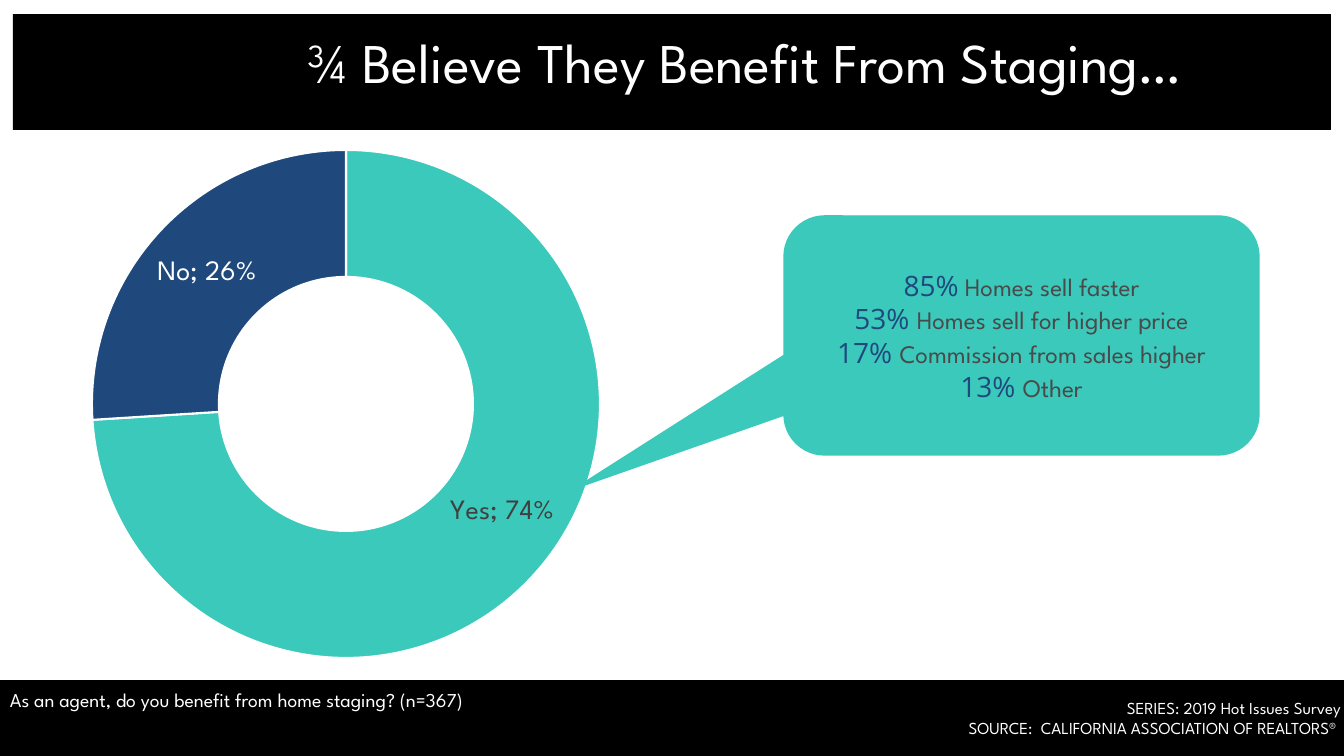
from lxml import etree
from pptx import Presentation
from pptx.chart.data import CategoryChartData
from pptx.dml.color import RGBColor
from pptx.enum.chart import XL_CHART_TYPE
from pptx.enum.shapes import MSO_SHAPE
from pptx.enum.text import MSO_ANCHOR, PP_ALIGN
from pptx.oxml import parse_xml
from pptx.oxml.ns import nsdecls, qn
from pptx.util import Emu, Pt

EMU_PER_PX = 914400 / 100.8
SPARTAN, OPEN_SANS = "League Spartan", "Open Sans"
BLACK, WHITE, TEAL, NAVY = "000000", "FFFFFF", "3AC9BB", "1F497D"
DARK_GREY, GREY = "404040", "4A4A4A"
RECTANGLE = MSO_SHAPE.RECTANGLE
CALLOUT = MSO_SHAPE.ROUNDED_RECTANGULAR_CALLOUT
DOUGHNUT = XL_CHART_TYPE.DOUGHNUT
LEFT, CENTER, RIGHT = PP_ALIGN.LEFT, PP_ALIGN.CENTER, PP_ALIGN.RIGHT
TOP, MIDDLE = MSO_ANCHOR.TOP, MSO_ANCHOR.MIDDLE

ANSWERS = [("Yes", 0.74, TEAL, DARK_GREY), ("No", 0.26, NAVY, WHITE)]
BENEFITS = [
    ("85%", " Homes sell faster"),
    ("53% ", "Homes sell for higher price"),
    ("17% ", "Commission from sales higher"),
    ("13% ", "Other"),
]


def px(*lengths):
    return [Emu(round(length * EMU_PER_PX)) for length in lengths]


def color(hex_string):
    return RGBColor.from_string(hex_string)


def style_font(font, name, size, fill):
    font.name = name
    font.size = Pt(size)
    font.color.rgb = color(fill)


def write(frame, paragraphs, align, anchor=TOP, wrap=True, line_spacing=None):
    """Fill a text frame; each paragraph is a list of (text, font, size, colour)."""
    frame.word_wrap = wrap
    frame.vertical_anchor = anchor
    for index, spans in enumerate(paragraphs):
        para = frame.add_paragraph() if index else frame.paragraphs[0]
        para.alignment = align
        if line_spacing:
            para.line_spacing = line_spacing
        for text, name, size, fill in spans:
            span = para.add_run()
            span.text = text
            style_font(span.font, name, size, fill)


def add_text(page, bounds, lines, size, align, **options):
    box = page.shapes.add_textbox(*px(*bounds))
    paragraphs = [[(line, SPARTAN, size, WHITE)] for line in lines]
    write(box.text_frame, paragraphs, align, **options)


def add_block(page, preset, bounds, fill):
    block = page.shapes.add_shape(preset, *px(*bounds))
    block.shadow.inherit = False
    block.fill.solid()
    block.fill.fore_color.rgb = color(fill)
    block.line.fill.background()
    return block


def add_callout(page, bounds):
    callout = add_block(page, CALLOUT, bounds, TEAL)
    callout.line.color.rgb = color(TEAL)
    callout.line.width = Pt(1)
    for index, value in enumerate((-0.94, 0.64, 0.17)):
        callout.adjustments[index] = value
    paragraphs = [
        [(share, OPEN_SANS, 20, NAVY), (reason, SPARTAN, 18, GREY)]
        for share, reason in BENEFITS
    ]
    write(callout.text_frame, paragraphs, CENTER, MIDDLE)


def manual_layout(target="", **parts):
    """Build a c:layout element from fractions of the chart area."""
    values = "".join(f'<c:{key} val="{value}"/>' for key, value in parts.items())
    return parse_xml(
        f'<c:layout {nsdecls("c")}><c:manualLayout>{target}{values}'
        "</c:manualLayout></c:layout>"
    )


def show_category_and_value(labels):
    labels.find(qn("c:showCatName")).set("val", "1")
    labels.find(qn("c:showVal")).set("val", "1")
    labels.find(qn("c:showPercent")).set("val", "0")
    separator = etree.Element(qn("c:separator"))
    separator.text = "; "
    labels.find(qn("c:showBubbleSize")).addnext(separator)


def add_doughnut(page, bounds):
    data = CategoryChartData(number_format="0%")
    data.categories = [answer[0] for answer in ANSWERS]
    data.add_series("Series 1", [answer[1] for answer in ANSWERS])
    chart = page.shapes.add_chart(DOUGHNUT, *px(*bounds), data).chart
    chart.has_legend = False
    chart.has_title = False
    style_font(chart.font, SPARTAN, 10, BLACK)

    plot = chart.plots[0]
    plot.vary_by_categories = True
    plot._element.find(qn("c:holeSize")).set("val", "58")
    series = plot.series[0]
    for index, (_, _, fill, label_color) in enumerate(ANSWERS):
        point = series.points[index]
        point.format.fill.solid()
        point.format.fill.fore_color.rgb = color(fill)
        point.format.line.color.rgb = color(WHITE)
        point.format.line.width = Pt(1.5)
        style_font(point.data_label.font, SPARTAN, 20, label_color)

    labels = series._element.find(qn("c:dLbls"))
    point_labels = labels.findall(qn("c:dLbl"))
    for element in point_labels:
        show_category_and_value(element)
    yes_offset = manual_layout(x=0.02, y=-0.04)
    point_labels[0].find(qn("c:idx")).addnext(yes_offset)

    area = chart._chartSpace.chart.plotArea
    for layout in area.findall(qn("c:layout")):
        area.remove(layout)
    inner = '<c:layoutTarget val="inner"/><c:xMode val="edge"/><c:yMode val="edge"/>'
    area.insert(0, manual_layout(inner, x=0.21, y=0.03, w=0.58, h=0.94))


def main():
    deck = Presentation()
    deck.slide_width, deck.slide_height = px(1344, 756)
    page = deck.slides.add_slide(deck.slide_layouts[6])

    add_block(page, RECTANGLE, (0, 680, 1344, 76), BLACK)
    add_block(page, RECTANGLE, (13, 14, 1318, 116), BLACK)
    add_doughnut(page, (-92, 133, 876, 542))
    source = [
        "SERIES: 2019 Hot Issues Survey",
        "SOURCE:  CALIFORNIA ASSOCIATION OF REALTORS® ",
    ]
    add_text(page, (903, 693, 448, 50), source, 12, RIGHT, wrap=False)
    title = ["¾ Believe They Benefit From Staging…"]
    add_text(page, (171, 31, 1146, 68), title, 40, CENTER, anchor=MIDDLE,
             line_spacing=0.9)
    question = ["As an agent, do you benefit from home staging? (n=367)"]
    add_text(page, (0, 683, 482, 57), question, 14, LEFT)
    add_callout(page, (784, 216, 475, 239))

    deck.save("out.pptx")


if __name__ == "__main__":
    main()
